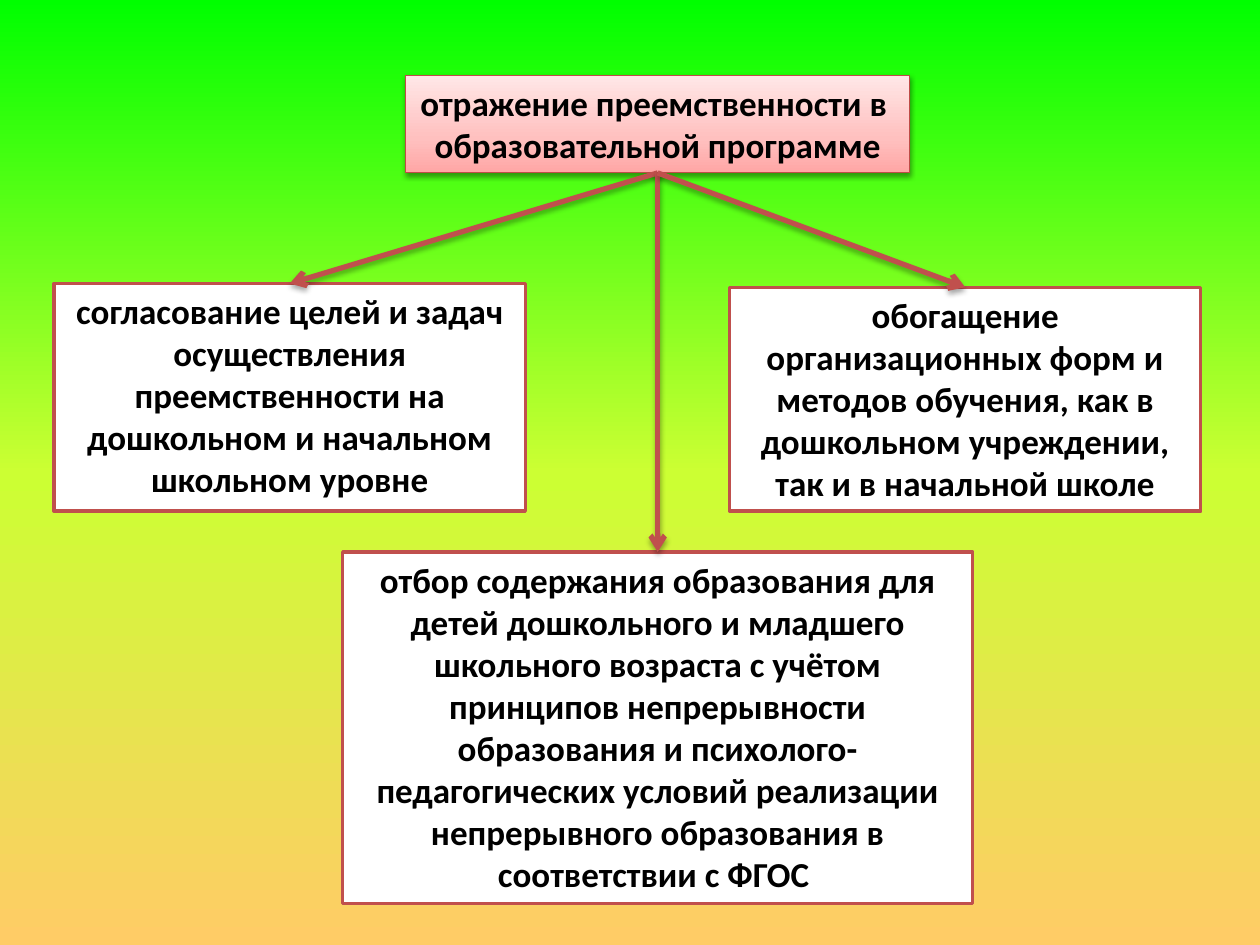
import pptx
import pptx.util
import pptx.dml.color
import pptx.enum.shapes
import pptx.enum.text
import pptx.oxml
import pptx.oxml.ns
import lxml.etree

# Content: wording and place as shares of the slide (left, top, width, height)
HEADING = {
    "text": "отражение преемственности в \nобразовательной программе",
    "place": (0.322, 0.08, 0.4, 0.103),
}
BRANCHES = [
    {"text": "согласование целей и задач осуществления преемственности на "
             "дошкольном и начальном школьном уровне",
     "place": (0.043, 0.3, 0.374, 0.241)},
    {"text": "отбор содержания образования для детей дошкольного и младшего "
             "школьного возраста с учётом принципов непрерывности образования "
             "и психолого-педагогических условий реализации непрерывного "
             "образования в соответствии с ФГОС ",
     "place": (0.272, 0.584, 0.5, 0.372)},
    {"text": "обогащение организационных форм и методов обучения, как в "
             "дошкольном учреждении, так и в начальной школе",
     "place": (0.579, 0.304, 0.374, 0.237)},
]

# Style
COLOURS = {"text": "000000", "box": "FFFFFF", "accent": "C0504D",
           "heading_line": "BF4C48", "shadow": "000000"}
SKY = [(0, "00FF00"), (50, "CCFF33"), (100, "FFCC66")]
ROSE = [(0, "FFA6A5"), (35, "FFC0BF"), (100, "FFE7E7")]
FONT, SIZE = "Calibri", 20
WIDTH, HEIGHT = pptx.util.Inches(10), pptx.util.Inches(7.5)
qn = pptx.oxml.ns.qn


def colour(name):
    return pptx.dml.color.RGBColor.from_string(COLOURS[name])


def set_gradient(fill, element, stops, angle):
    fill.gradient()
    gradient = next(element.iter(qn("a:gradFill")))
    for child in list(gradient):
        gradient.remove(child)
    stop_list = lxml.etree.SubElement(gradient, qn("a:gsLst"))
    for position, value in stops:
        stop = lxml.etree.SubElement(stop_list, qn("a:gs"), pos=str(position * 1000))
        lxml.etree.SubElement(stop, qn("a:srgbClr"), val=value)
    lxml.etree.SubElement(gradient, qn("a:lin"), ang=str(angle * 60000), scaled="0")


def add_shadow(effects, opacity, distance):
    shadow = lxml.etree.SubElement(
        effects, qn("a:outerShdw"), blurRad=str(pptx.util.Pt(3.1)),
        dist=str(pptx.util.Pt(distance)), dir="5400000", rotWithShape="0")
    tint = lxml.etree.SubElement(shadow, qn("a:srgbClr"), val=COLOURS["shadow"])
    lxml.etree.SubElement(tint, qn("a:alpha"), val=str(opacity * 1000))


def add_box(page, item, line, line_width, wrap=True):
    left, top, width, height = item["place"]
    box = page.shapes.add_shape(
        pptx.enum.shapes.MSO_SHAPE.RECTANGLE, round(left * WIDTH),
        round(top * HEIGHT), round(width * WIDTH), round(height * HEIGHT))
    box.fill.solid()
    box.fill.fore_color.rgb = colour("box")
    box.line.color.rgb = colour(line)
    box.line.width = pptx.util.Pt(line_width)
    box.shadow.inherit = False
    frame = box.text_frame
    frame.text = item["text"]
    frame.word_wrap = wrap
    frame.auto_size = pptx.enum.text.MSO_AUTO_SIZE.SHAPE_TO_FIT_TEXT
    frame.vertical_anchor = pptx.enum.text.MSO_ANCHOR.TOP
    for para in frame.paragraphs:
        para.alignment = pptx.enum.text.PP_ALIGN.CENTER
        for span in para.runs:
            span.font.name = FONT
            span.font.size = pptx.util.Pt(SIZE)
            span.font.bold = True
            span.font.color.rgb = colour("text")
    return box


def add_arrow(page, source, target):
    arrow = page.shapes.add_connector(
        pptx.enum.shapes.MSO_CONNECTOR.STRAIGHT, 0, 0, 0, 0)
    arrow.begin_connect(source, 2)  # bottom centre
    arrow.end_connect(target, 0)    # top centre
    arrow.line.color.rgb = colour("accent")
    arrow.line.width = pptx.util.Pt(3)
    lxml.etree.SubElement(arrow.line._get_or_add_ln(), qn("a:tailEnd"), type="arrow")
    effects = lxml.etree.SubElement(arrow.element.spPr, qn("a:effectLst"))
    add_shadow(effects, 35, 1.8)


def main():
    deck = pptx.Presentation()
    deck.slide_width, deck.slide_height = WIDTH, HEIGHT
    page = deck.slides.add_slide(deck.slide_layouts[6])
    set_gradient(page.background.fill, page.element, SKY, 90)

    # Heading
    heading = add_box(page, HEADING, "heading_line", 0.75, wrap=False)
    set_gradient(heading.fill, heading.element, ROSE, 270)
    add_shadow(next(heading.element.iter(qn("a:effectLst"))), 38, 1.6)

    # Branches, then the arrows on top of them
    boxes = [add_box(page, item, "accent", 2) for item in BRANCHES]
    for box in boxes:
        add_arrow(page, heading, box)

    deck.save("out.pptx")


if __name__ == "__main__":
    main()
